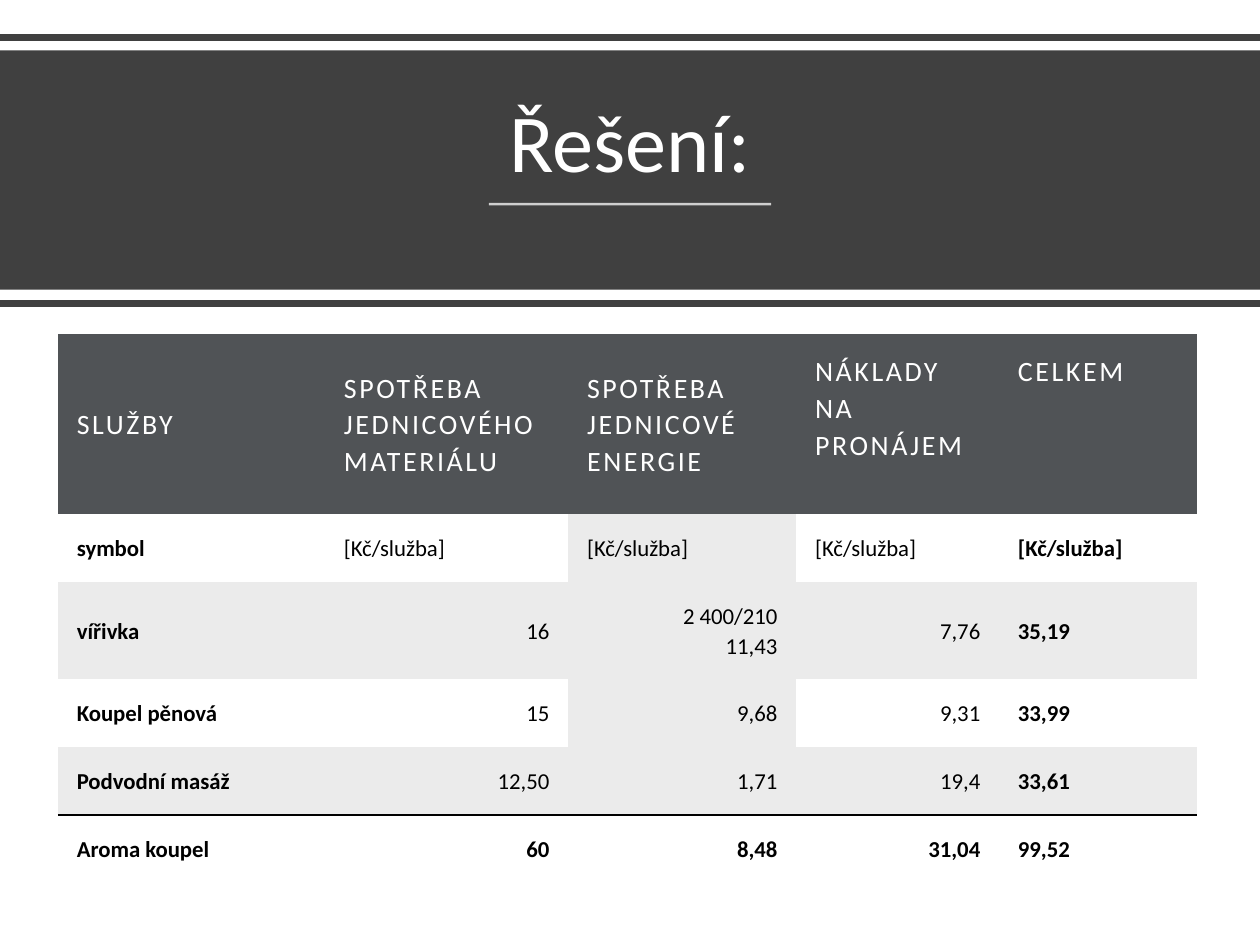
"""Build the solution slide: a banner title above a table of service costs."""
import pptx
import pptx.dml.color
import pptx.enum.shapes
import pptx.enum.text
import pptx.oxml
import pptx.oxml.ns
import pptx.util
from pptx.util import Inches, Pt

TITLE = "Řešení:"
HEADINGS = ["SLUŽBY", "SPOTŘEBA JEDNICOVÉHO MATERIÁLU", "SPOTŘEBA JEDNICOVÉ ENERGIE",
            "NÁKLADY NA PRONÁJEM", "CELKEM"]
UNITS = ["symbol"] + ["[Kč/služba]"] * 4
SERVICES = [
    ["vířivka", "16", "2\u00a0400/210\n11,43", "7,76", "35,19"],
    ["Koupel pěnová", "15", "9,68", "9,31", "33,99"],
    ["Podvodní masáž", "12,50", "1,71", "19,4", "33,61"],
    ["Aroma koupel", "60", "8,48", "31,04", "99,52"],
]
COST_ROWS = [HEADINGS, UNITS] + SERVICES
COLUMN_WIDTHS = [2.12, 1.93, 1.81, 1.61, 1.57]
ROW_HEIGHTS = [1.43, 0.54, 0.77, 0.54, 0.54, 0.54]
LAST_ROW, LAST_COLUMN, ENERGY_COLUMN = len(COST_ROWS) - 1, len(HEADINGS) - 1, 2

THEME = {
    "font": "Calibri", "banner": "404040", "header": "505356", "band": "EBEBEB",
    "light": "FFFFFF", "dark": "000000", "title_size": 47, "header_size": 16, "body_size": 13,
}
NO_STYLE_NO_GRID = "{2D5ABB26-0587-4C30-8999-92F81FD0307C}"
ALIGN = pptx.enum.text.PP_ALIGN
ANCHOR = pptx.enum.text.MSO_ANCHOR


def color(role):
    return pptx.dml.color.RGBColor.from_string(THEME[role])


def element(markup):
    namespace = pptx.oxml.ns.nsdecls("a")
    return pptx.oxml.parse_xml(markup.replace(">", f" {namespace}>", 1))


def set_font(font, size, role, bold=False):
    font.name, font.size, font.bold = THEME["font"], Pt(THEME[size]), bold
    font.color.rgb = color(role)


def add_rule(slide, left, right, y, role, width, opacity=None):
    rule = slide.shapes.add_connector(pptx.enum.shapes.MSO_CONNECTOR.STRAIGHT,
                                      Inches(left), Inches(y), Inches(right), Inches(y))
    rule.line.color.rgb, rule.line.width = color(role), Pt(width)
    properties = rule._element.spPr
    properties.append(element("<a:effectLst></a:effectLst>"))
    if opacity:
        tint = properties.find(".//" + pptx.oxml.ns.qn("a:srgbClr"))
        tint.append(element(f'<a:alpha val="{opacity * 1000}"></a:alpha>'))


def add_banner(slide):
    add_rule(slide, 0, 10, 0.3, "banner", 4)
    banner = slide.shapes.add_shape(pptx.enum.shapes.MSO_SHAPE.RECTANGLE,
                                    Inches(0), Inches(0.4), Inches(10), Inches(1.9))
    banner.shadow.inherit = False
    banner.fill.solid()
    banner.fill.fore_color.rgb = color("banner")
    banner.line.fill.background()
    title = slide.shapes.add_textbox(Inches(0.43), Inches(0.54), Inches(9.14), Inches(1.02)).text_frame
    title.word_wrap, title.vertical_anchor = True, ANCHOR.BOTTOM
    title.text = TITLE
    heading = title.paragraphs[0]
    heading.alignment, heading.line_spacing = ALIGN.CENTER, 0.9
    set_font(heading.font, "title_size", "light")
    add_rule(slide, 3.88, 6.12, 1.62, "light", 1.5, opacity=75)
    add_rule(slide, 0, 10, 2.41, "banner", 4)


def cell_fill(row, column):
    if row == 0:
        return "header"
    banded = row % 2 == 0 or column == ENERGY_COLUMN
    return "band" if banded and row < LAST_ROW else None


def cell_alignment(row, column):
    if column == LAST_COLUMN:
        return ALIGN.LEFT
    return ALIGN.RIGHT if row > 1 and column > 0 else ALIGN.JUSTIFY


def add_edge(cell, side):
    cell._tc.get_or_add_tcPr().insert(0, element(
        f'<a:ln{side} w="12700"><a:solidFill><a:srgbClr val="{THEME["dark"]}"/>'
        f'</a:solidFill></a:ln{side}>'))


def fill_cell(cell, text, row, column):
    cell.margin_left = cell.margin_right = cell.margin_top = cell.margin_bottom = Inches(0.15)
    top_anchored = (row == 0 and column >= 3) or (row == 1 and column >= 2)
    cell.vertical_anchor = ANCHOR.TOP if top_anchored else ANCHOR.MIDDLE
    cell.text = text
    bold = row > 0 and (column in (0, LAST_COLUMN) or row == LAST_ROW)
    for paragraph in cell.text_frame.paragraphs:
        paragraph.alignment, paragraph.line_spacing = cell_alignment(row, column), 1.07
        if row == 0:
            set_font(paragraph.font, "header_size", "light")
            paragraph.runs[0]._r.get_or_add_rPr().set("spc", "150")
        else:
            set_font(paragraph.font, "body_size", "dark", bold)
    role = cell_fill(row, column)
    if role:
        cell.fill.solid()
        cell.fill.fore_color.rgb = color(role)
    else:
        cell.fill.background()
    if row == LAST_ROW - 1:
        add_edge(cell, "B")
    elif row == LAST_ROW:
        add_edge(cell, "T")


def add_costs(slide):
    costs = slide.shapes.add_table(len(COST_ROWS), len(HEADINGS), Inches(0.46), Inches(2.65),
                                   Inches(sum(COLUMN_WIDTHS)), Inches(sum(ROW_HEIGHTS))).table
    costs._tbl.tblPr.find(pptx.oxml.ns.qn("a:tableStyleId")).text = NO_STYLE_NO_GRID
    costs.horz_banding = False
    for column, width in zip(costs.columns, COLUMN_WIDTHS):
        column.width = Inches(width)
    for row, (texts, height) in enumerate(zip(COST_ROWS, ROW_HEIGHTS)):
        costs.rows[row].height = Inches(height)
        for column, text in enumerate(texts):
            fill_cell(costs.cell(row, column), text, row, column)


def main():
    deck = pptx.Presentation()
    deck.slide_width, deck.slide_height = Inches(10), Inches(7.5)
    slide = deck.slides.add_slide(deck.slide_layouts[6])
    add_banner(slide)
    add_costs(slide)
    deck.save("out.pptx")


if __name__ == "__main__":
    main()
